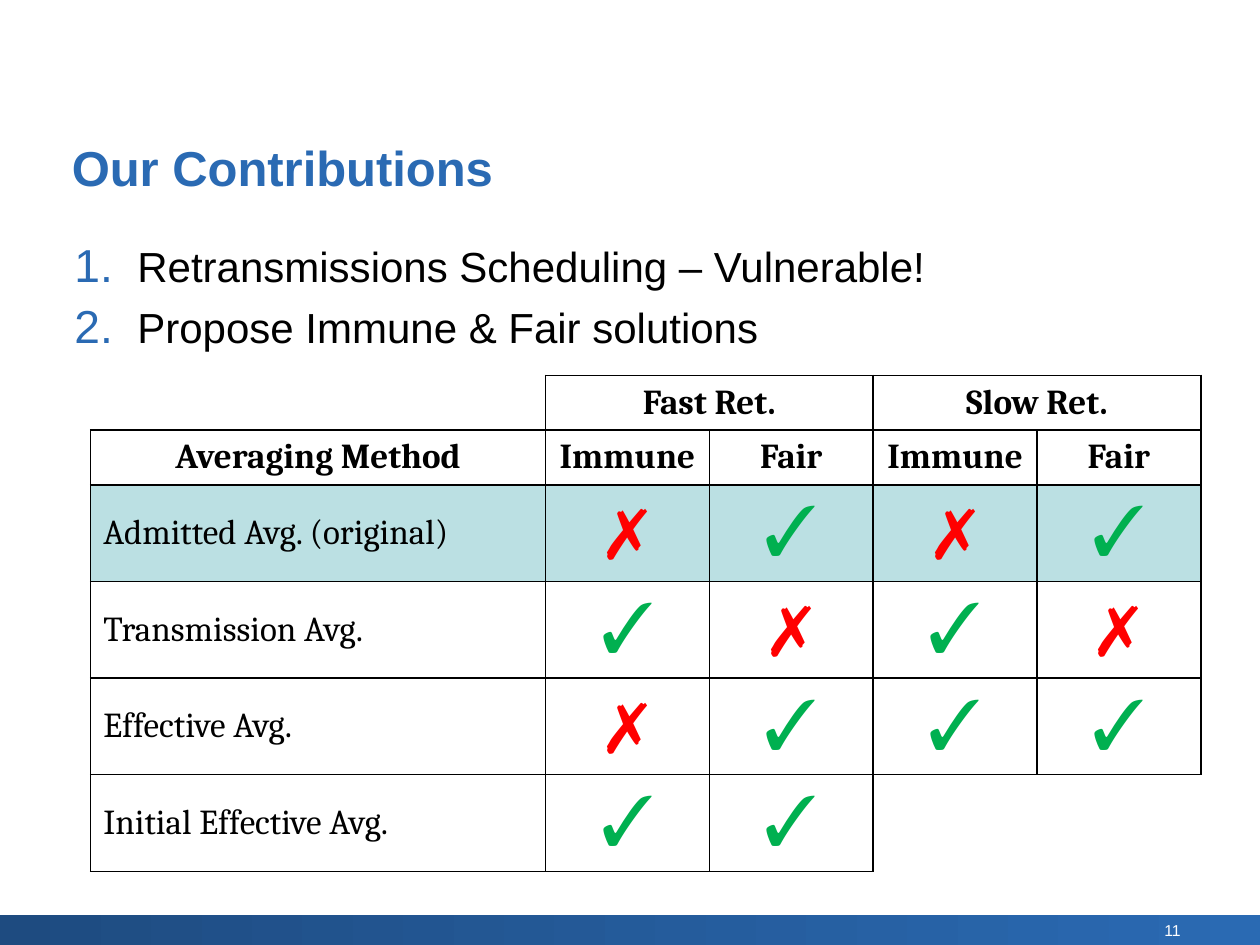
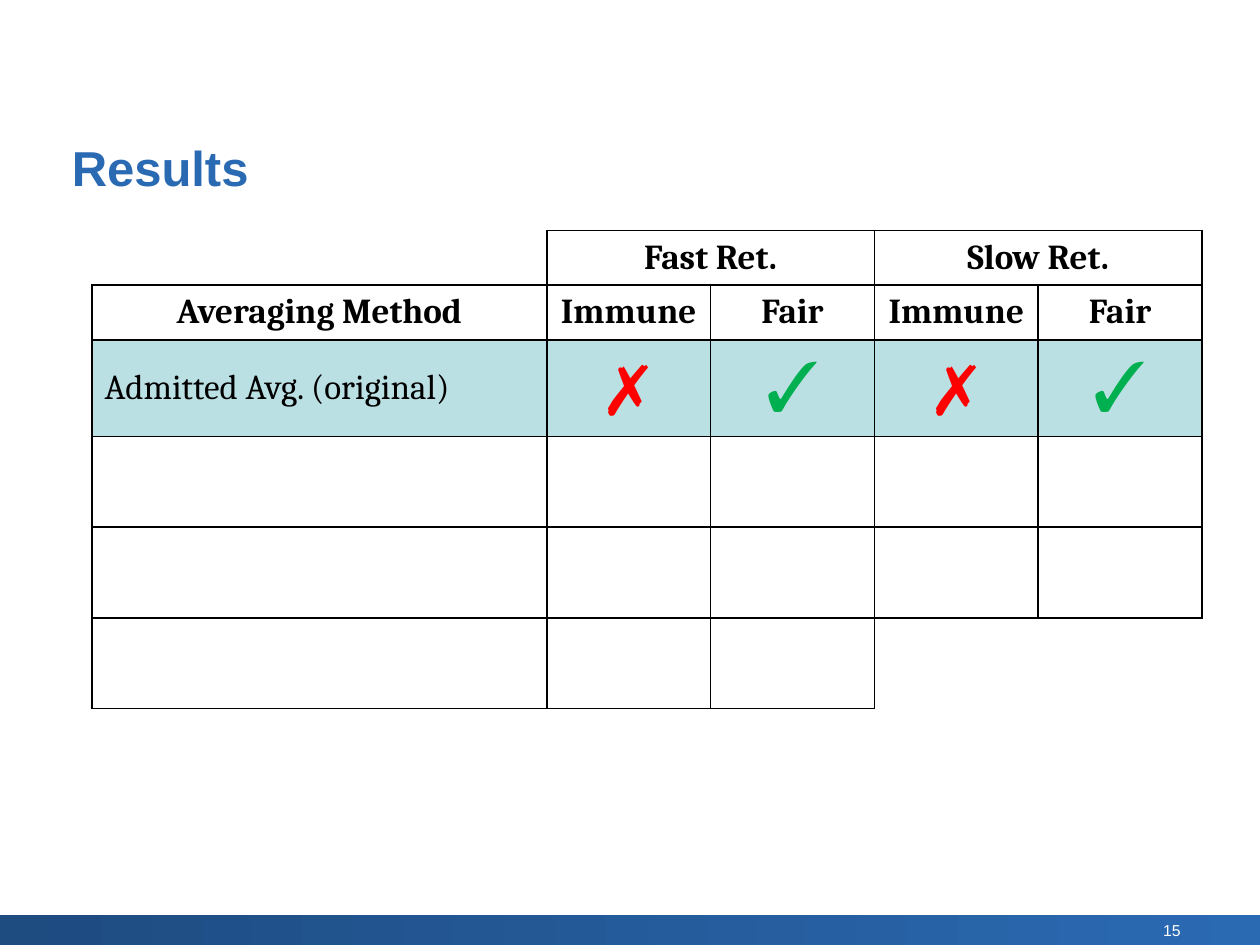
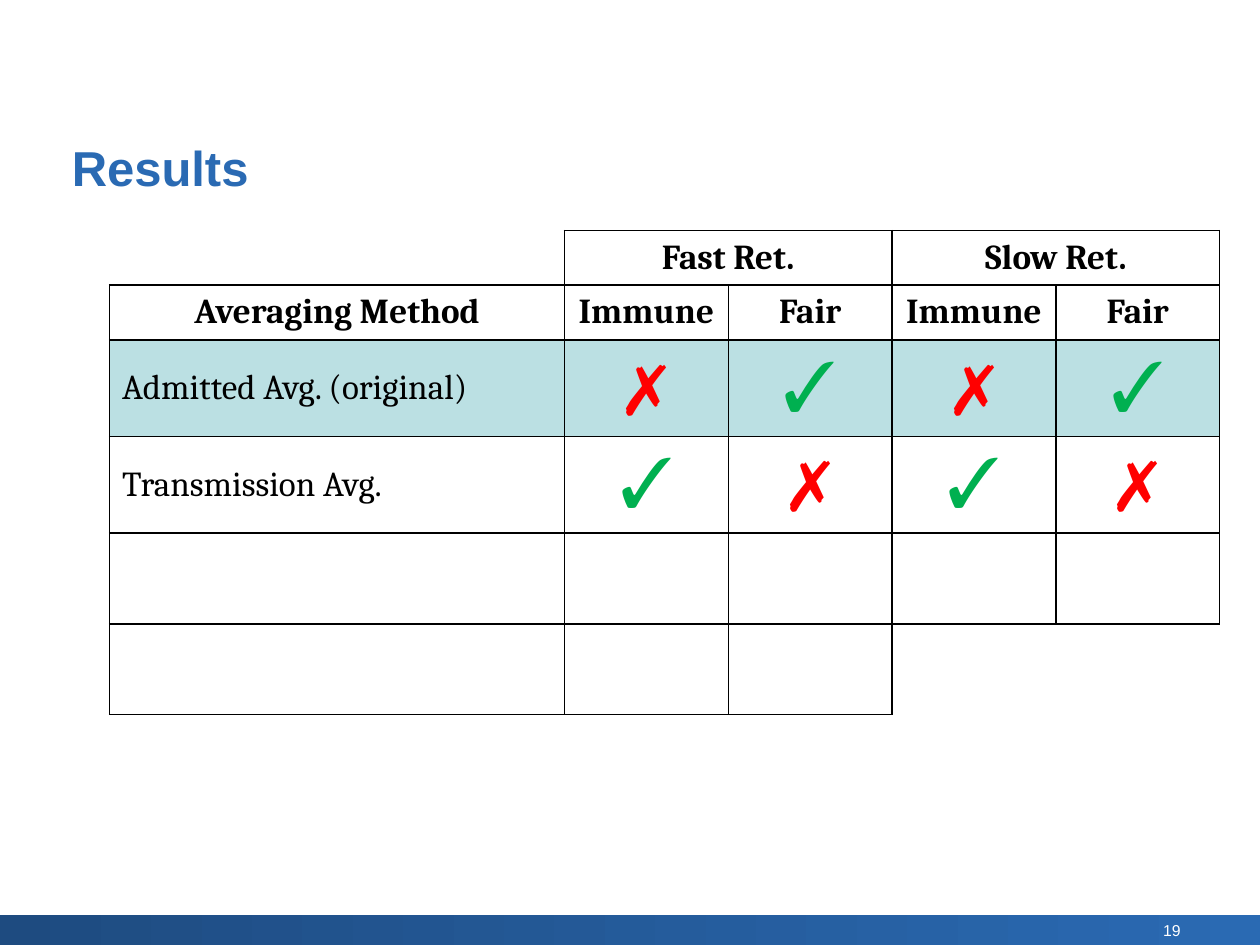
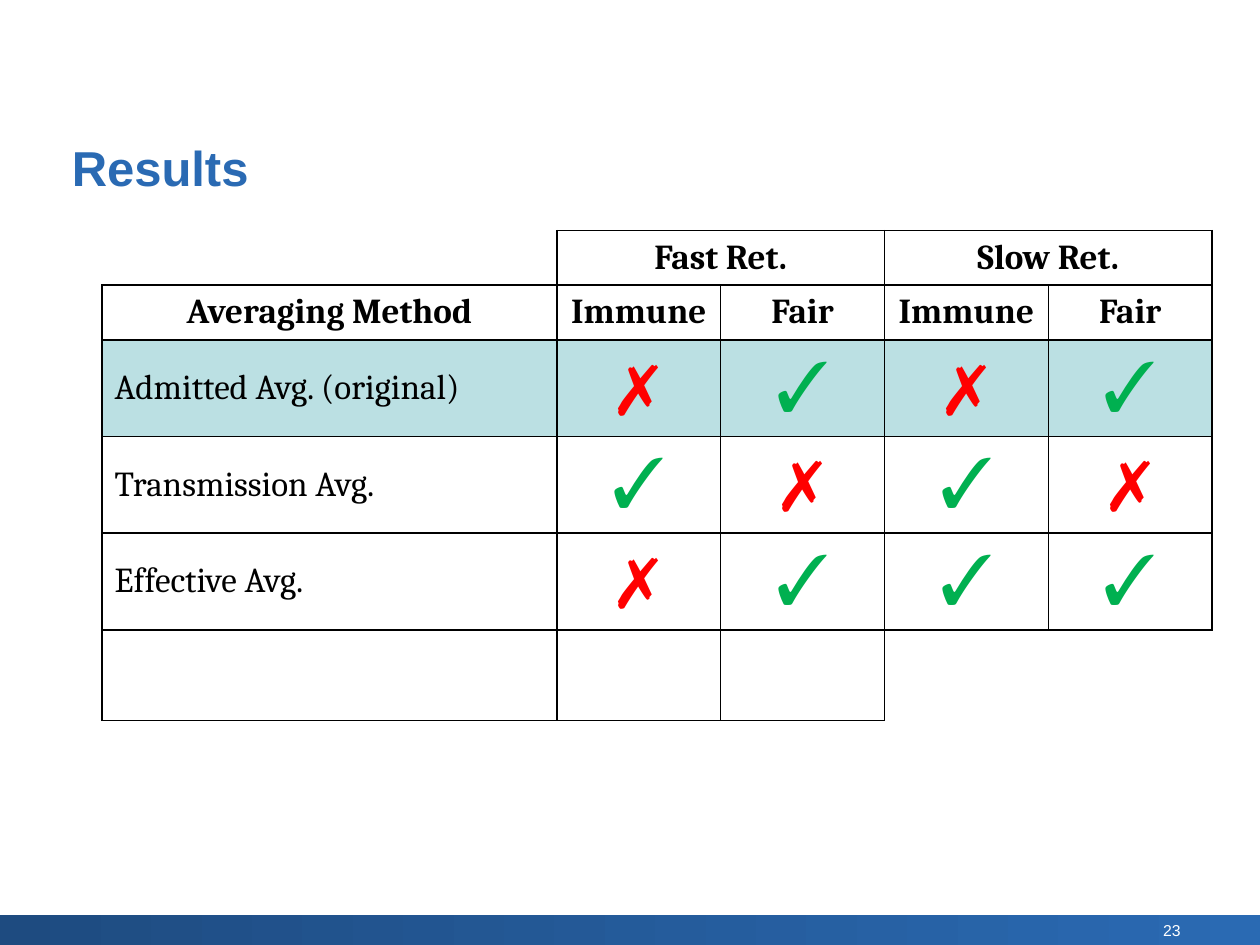
from dataclasses import dataclass

from lxml import etree
from pptx import Presentation
from pptx.dml.color import RGBColor
from pptx.enum.shapes import MSO_SHAPE
from pptx.enum.text import MSO_ANCHOR, PP_ALIGN
from pptx.oxml.ns import qn
from pptx.util import Inches, Pt

RECTANGLE = MSO_SHAPE.RECTANGLE
TOP, MIDDLE = MSO_ANCHOR.TOP, MSO_ANCHOR.MIDDLE
LEFT, CENTER, RIGHT = PP_ALIGN.LEFT, PP_ALIGN.CENTER, PP_ALIGN.RIGHT


@dataclass(frozen=True)
class Theme:
    """Colours, fonts and type sizes shared by all slides."""

    blue: str = "2A6AB3"
    black: str = "000000"
    white: str = "FFFFFF"
    red: str = "FF0000"
    green: str = "00B050"
    highlight: str = "BBE0E3"
    sans: str = "Arial"
    serif: str = "Cambria"
    title: int = 28
    body: int = 24
    cell: int = 20
    mark: int = 40
    number: int = 9


THEME = Theme()
YES, NO = "✓", "✗"
MARK_COLORS = {YES: THEME.green, NO: THEME.red}
COLUMN_WIDTHS = (3.61, 1.3, 1.3, 1.3, 1.3)
HEADER_HEIGHT, FILLED_HEIGHT, EMPTY_HEIGHT = 0.42, 0.74, 0.72
GROUPS = ((1, "Fast Ret."), (3, "Slow Ret."))
HEADINGS = ("Averaging Method", "Immune", "Fair", "Immune", "Fair")
METHODS = (
    ("Admitted Avg. (original)", NO, YES, NO, YES),
    ("Transmission Avg.", YES, NO, YES, NO),
    ("Effective Avg.", NO, YES, YES, YES),
    ("Initial Effective Avg.", YES, YES),
)
OPEN_CORNERS = {(0, 0): "RB", (5, 3): "LT", (5, 4): "T"}
PAGES = (
    ("Our Contributions", 11, (0.72, 2.98), 4),
    ("Results", 15, (0.73, 1.83), 1),
    ("Results", 19, (0.87, 1.83), 2),
    ("Results", 23, (0.81, 1.83), 3),
)
CONTRIBUTIONS = (
    "Retransmissions Scheduling – Vulnerable!",
    "Propose Immune & Fair solutions",
)


def add_span(para, text, size, color, font=THEME.sans, bold=False):
    """Append one formatted run to a paragraph."""
    span = para.add_run()
    span.text = text
    span.font.size = Pt(size)
    span.font.name = font
    span.font.bold = bold
    span.font.color.rgb = RGBColor.from_string(color)


def add_text_box(page, box, anchor=TOP):
    """Add a wrapping text box without margins and return its frame."""
    frame = page.shapes.add_textbox(*map(Inches, box)).text_frame
    frame.word_wrap = True
    frame.vertical_anchor = anchor
    frame.margin_left = frame.margin_right = 0
    frame.margin_top = frame.margin_bottom = 0
    return frame


def add_title(page, box, text):
    """Write the slide title."""
    para = add_text_box(page, box).paragraphs[0]
    para.line_spacing = Pt(38)
    add_span(para, text, THEME.title, THEME.blue, bold=True)


def add_footer(page, box, number):
    """Draw the gradient band with the page number near its right end."""
    left, top, width, height = box
    band = page.shapes.add_shape(RECTANGLE, *map(Inches, box))
    band.shadow.inherit = False
    band.line.fill.background()
    band.fill.gradient()
    band.fill.gradient_angle = 0
    for stop in band.fill.gradient_stops:
        stop.color.rgb = RGBColor.from_string(THEME.blue)
    dark_end = next(band._element.spPr.iter(qn("a:srgbClr")))
    etree.SubElement(dark_end, qn("a:shade"), val="46275")

    number_box = (left + width - 1.46, top, 0.83, height)
    para = add_text_box(page, number_box, MIDDLE).paragraphs[0]
    para.alignment = RIGHT
    add_span(para, str(number), THEME.number, THEME.white)


def number_paragraph(para):
    """Give a paragraph a hanging blue number."""
    properties = para._p.get_or_add_pPr()
    properties.set("marL", str(Inches(0.5)))
    properties.set("indent", str(Inches(-0.5)))
    color = etree.SubElement(properties, qn("a:buClr"))
    etree.SubElement(color, qn("a:srgbClr"), val=THEME.blue)
    etree.SubElement(properties, qn("a:buSzPct"), val="110000")
    etree.SubElement(properties, qn("a:buFont"), typeface=THEME.sans)
    etree.SubElement(properties, qn("a:buAutoNum"), type="arabicPeriod")


def add_numbered_list(page, box, items):
    """Write a numbered list."""
    frame = add_text_box(page, box)
    for index, item in enumerate(items):
        para = frame.add_paragraph() if index else frame.paragraphs[0]
        para.line_spacing = 1.2
        number_paragraph(para)
        add_span(para, item, THEME.body, THEME.black)


def style_cell(cell, sides, fill=None):
    """Draw the borders on the given sides and set the fill."""
    properties = cell._tc.get_or_add_tcPr()
    for side in "LRTB":
        line = etree.SubElement(properties, qn(f"a:ln{side}"), w=str(Pt(1)))
        if side in sides:
            solid = etree.SubElement(line, qn("a:solidFill"))
            etree.SubElement(solid, qn("a:srgbClr"), val=THEME.black)
        else:
            etree.SubElement(line, qn("a:noFill"))
    if fill:
        cell.fill.solid()
        cell.fill.fore_color.rgb = RGBColor.from_string(fill)
    else:
        cell.fill.background()


def write_cell(cell, text, alignment=CENTER, bold=True):
    """Write a heading, a method name or a coloured mark."""
    cell.vertical_anchor = MIDDLE
    para = cell.text_frame.paragraphs[0]
    para.alignment = alignment
    size = THEME.mark if text in MARK_COLORS else THEME.cell
    color = MARK_COLORS.get(text, THEME.black)
    add_span(para, text, size, color, THEME.serif, bold)


def add_comparison(page, corner, shown):
    """Build the method table with the first methods filled in."""
    heights = [HEADER_HEIGHT] * 2 + [
        FILLED_HEIGHT if index < shown else EMPTY_HEIGHT
        for index in range(len(METHODS))
    ]
    box = (*corner, sum(COLUMN_WIDTHS), sum(heights))
    table = page.shapes.add_table(
        len(heights), len(COLUMN_WIDTHS), *map(Inches, box)
    ).table
    table.first_row = table.horz_banding = False
    for column, width in zip(table.columns, COLUMN_WIDTHS):
        column.width = Inches(width)
    for row_index, height in enumerate(heights):
        table.rows[row_index].height = Inches(height)
        fill = THEME.highlight if row_index == 2 else None
        for column_index in range(len(COLUMN_WIDTHS)):
            sides = OPEN_CORNERS.get((row_index, column_index), "LRTB")
            style_cell(table.cell(row_index, column_index), sides, fill)

    for column_index, group in GROUPS:
        cell = table.cell(0, column_index)
        cell.merge(table.cell(0, column_index + 1))
        write_cell(cell, group)
    for column_index, heading in enumerate(HEADINGS):
        write_cell(table.cell(1, column_index), heading)
    for row_index, (method, *marks) in enumerate(METHODS[:shown], start=2):
        write_cell(table.cell(row_index, 0), method, LEFT, bold=False)
        for column_index, mark in enumerate(marks, start=1):
            write_cell(table.cell(row_index, column_index), mark)


def main():
    """Build and save the deck."""
    deck = Presentation()
    deck.slide_width, deck.slide_height = Inches(10), Inches(7.5)
    for title, number, corner, shown in PAGES:
        page = deck.slides.add_slide(deck.slide_layouts[6])
        add_footer(page, (0, 7.26, 10, 0.24), number)
        add_title(page, (0.57, 1.03, 8.83, 0.71), title)
        if title == "Our Contributions":
            add_numbered_list(page, (0.59, 1.83, 8.82, 5.17), CONTRIBUTIONS)
        add_comparison(page, corner, shown)
    deck.save("out.pptx")


if __name__ == "__main__":
    main()
